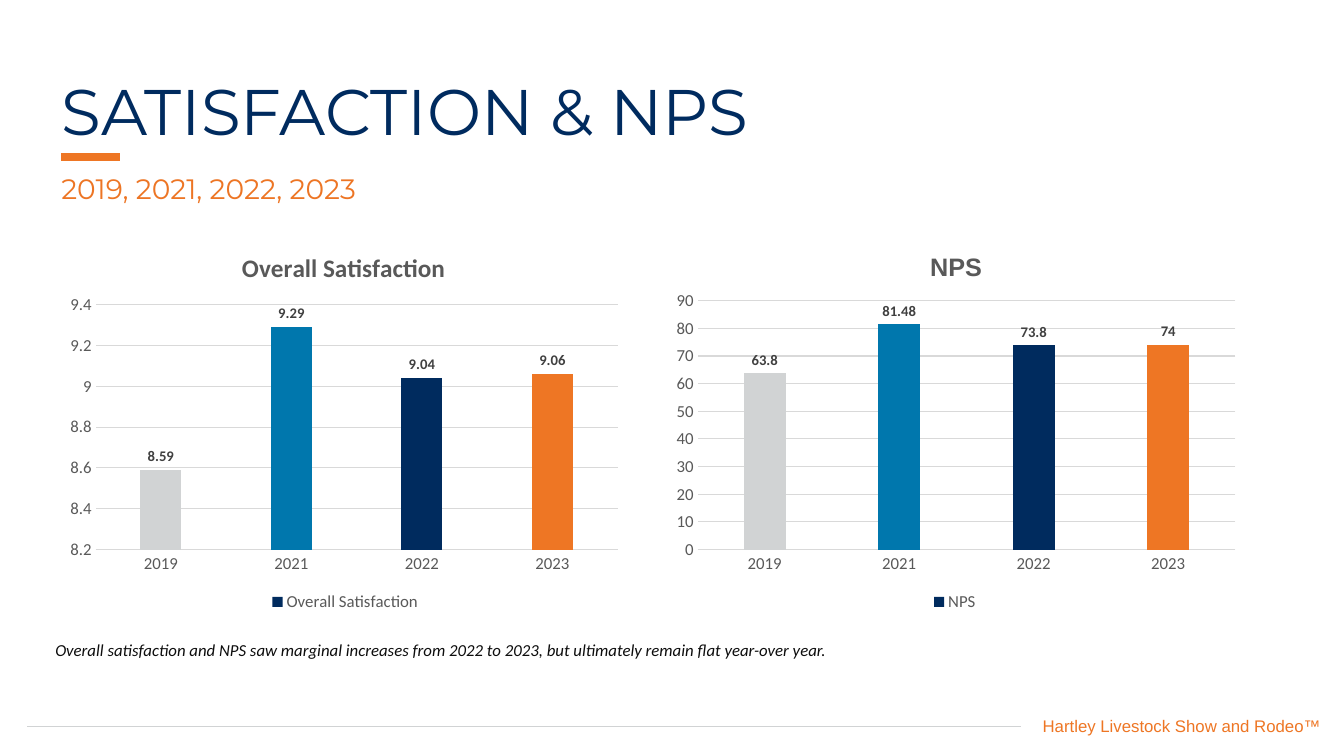
from dataclasses import dataclass

from lxml import etree
from pptx import Presentation
from pptx import util as u
from pptx.chart import data as chart_data
from pptx.dml.color import RGBColor
from pptx.enum import chart as chart_enum, shapes, text
from pptx.oxml import ns


@dataclass(frozen=True)
class Theme:
    navy: str = "002B5F"
    bar_navy: str = "002B5E"
    blue: str = "0077AD"
    orange: str = "EE7624"
    subtitle: str = "ED7524"
    silver: str = "D1D3D4"
    grid: str = "D9D9D9"
    axis: str = "595959"
    label: str = "404040"
    ink: str = "0D0D0D"
    title_size: float = 46
    subtitle_size: float = 20
    chart_title_size: float = 18
    body_size: float = 12
    label_size: float = 10.5
    heading_font: str = "Montserrat"
    body_font: str = "Calibri"
    footer_font: str = "Arial"


THEME = Theme()
YEARS = ("2019", "2021", "2022", "2023")
BAR_COLORS = (THEME.silver, THEME.blue, THEME.bar_navy, THEME.orange)


def style_font(font, name, size, color, bold=False, italic=False):
    font.name, font.size = name, u.Pt(size)
    font.bold, font.italic = bold, italic
    font.color.rgb = RGBColor.from_string(color)


def fill_text(box, area, words, font, align=text.PP_ALIGN.LEFT, heading=False):
    """Place a text shape and format its single paragraph."""
    box.left, box.top, box.width, box.height = map(u.Inches, area)
    frame = box.text_frame
    frame.text = words
    frame.word_wrap = True
    frame.auto_size = text.MSO_AUTO_SIZE.NONE
    frame.vertical_anchor = text.MSO_ANCHOR.TOP
    para = frame.paragraphs[0]
    para.alignment = align
    if heading:
        para.line_spacing, para.space_before = 0.9, u.Pt(10)
    style_font(para.runs[0].font, **font)


def add_text(page, area, words, font, **options):
    box = page.shapes.add_textbox(*map(u.Inches, area))
    fill_text(box, area, words, font, **options)


def add_rule(page, left, right, y, color, weight):
    rule = page.shapes.add_connector(
        shapes.MSO_CONNECTOR.STRAIGHT, *map(u.Inches, (left, y, right, y)))
    rule.line.color.rgb = RGBColor.from_string(color)
    rule.line.width = u.Pt(weight)
    etree.SubElement(rule._element.spPr, ns.qn("a:effectLst"))


def set_layout(parent, index, **fractions):
    """Give a chart part a fixed place, in fractions of the chart."""
    layout = parent.find(ns.qn("c:layout"))
    if layout is None:
        layout = etree.Element(ns.qn("c:layout"))
        parent.insert(index, layout)
    manual = etree.SubElement(layout, ns.qn("c:manualLayout"))
    if "w" in fractions:
        etree.SubElement(manual, ns.qn("c:layoutTarget")).set("val", "inner")
    for side in "xy":
        etree.SubElement(manual, ns.qn(f"c:{side}Mode")).set("val", "edge")
    for side, value in fractions.items():
        etree.SubElement(manual, ns.qn(f"c:{side}")).set("val", str(value))


def style_axes(chart, low, high, step):
    for axis in (chart.category_axis, chart.value_axis):
        axis.major_tick_mark = axis.minor_tick_mark = chart_enum.XL_TICK_MARK.NONE
        style_font(axis.tick_labels.font, THEME.body_font, THEME.body_size, THEME.axis)
    values = chart.value_axis
    values.minimum_scale, values.maximum_scale, values.major_unit = low, high, step
    values.format.line.fill.background()
    values.has_major_gridlines = True
    for line in (chart.category_axis.format.line, values.major_gridlines.format.line):
        line.color.rgb = RGBColor.from_string(THEME.grid)
        line.width = u.Pt(0.75)


def style_bars(plot):
    plot.gap_width, plot.overlap, plot.vary_by_categories = 219, -27, False
    series = plot.series[0]
    series.format.fill.solid()
    series.format.fill.fore_color.rgb = RGBColor.from_string(THEME.bar_navy)
    for index, color in enumerate(BAR_COLORS):
        if color != THEME.bar_navy:
            fill = series.points[index].format.fill
            fill.solid()
            fill.fore_color.rgb = RGBColor.from_string(color)
    labels = series.data_labels
    labels.show_value = True
    labels.position = chart_enum.XL_LABEL_POSITION.OUTSIDE_END
    style_font(labels.font, THEME.body_font, THEME.label_size, THEME.label, bold=True)


def add_bar_chart(page, area, name, values, scale, title_font, title_x, plot_area):
    data = chart_data.CategoryChartData()
    data.categories = YEARS
    data.add_series(name, values)
    chart = page.shapes.add_chart(
        chart_enum.XL_CHART_TYPE.COLUMN_CLUSTERED, *map(u.Inches, area), data).chart
    chart.font.name, chart.font.size = THEME.body_font, u.Pt(10)
    # Title and plot area
    chart.has_title = True
    chart.chart_title.text_frame.text = name
    run = chart.chart_title.text_frame.paragraphs[0].runs[0]
    style_font(run.font, title_font, THEME.chart_title_size, THEME.axis, bold=True)
    chart.chart_title.include_in_layout = False
    set_layout(chart.chart_title._element, 1, x=title_x, y=0.05)
    set_layout(chart._chartSpace.chart.plotArea, 0, **dict(zip("xywh", plot_area)))
    # Legend
    chart.has_legend = True
    chart.legend.position = chart_enum.XL_LEGEND_POSITION.BOTTOM
    chart.legend.include_in_layout = False
    style_font(chart.legend.font, THEME.body_font, THEME.body_size, THEME.axis)
    style_axes(chart, *scale)
    style_bars(chart.plots[0])


def main():
    deck = Presentation()
    deck.slide_width, deck.slide_height = u.Inches(13.33), u.Inches(7.5)
    page = deck.slides.add_slide(deck.slide_layouts[5])

    # Footer
    add_text(page, (6.89, 7.05, 6.31, 0.3), "Hartley Livestock Show and Rodeo™",
             dict(name=THEME.footer_font, size=THEME.body_size, color=THEME.orange),
             align=text.PP_ALIGN.RIGHT)
    add_rule(page, 0.27, 10.13, 7.21, THEME.silver, 1)

    # Heading
    fill_text(page.shapes.title, (0.51, 0.74, 12.6, 0.45), "SATISFACTION & NPS",
              dict(name=THEME.heading_font, size=THEME.title_size, color=THEME.navy),
              heading=True)
    add_rule(page, 0.61, 1.19, 1.56, THEME.orange, 6)
    add_text(page, (0.51, 1.69, 12.6, 0.45), "2019, 2021, 2022, 2023",
             dict(name=THEME.heading_font, size=THEME.subtitle_size,
                  color=THEME.subtitle), heading=True)

    # Charts
    add_bar_chart(page, (6.57, 2.25, 5.8, 3.86), "NPS", (63.8, 81.48, 73.8, 74),
                  (0, 90, 10), THEME.footer_font, 0.45, (0.06, 0.19, 0.92, 0.64))
    add_bar_chart(page, (0.61, 2.25, 5.63, 3.86), "Overall Satisfaction",
                  (8.59, 9.29, 9.04, 9.06), (8.2, 9.4, 0.2), THEME.body_font, 0.31,
                  (0.06, 0.2, 0.92, 0.63))

    # Takeaway
    add_text(page, (0.45, 6.3, 11.47, 0.3),
             "Overall satisfaction and NPS saw marginal increases from 2022 to 2023, "
             "but ultimately remain flat year-over year.",
             dict(name=THEME.body_font, size=THEME.body_size, color=THEME.ink,
                  italic=True))

    deck.save("out.pptx")


if __name__ == "__main__":
    main()
